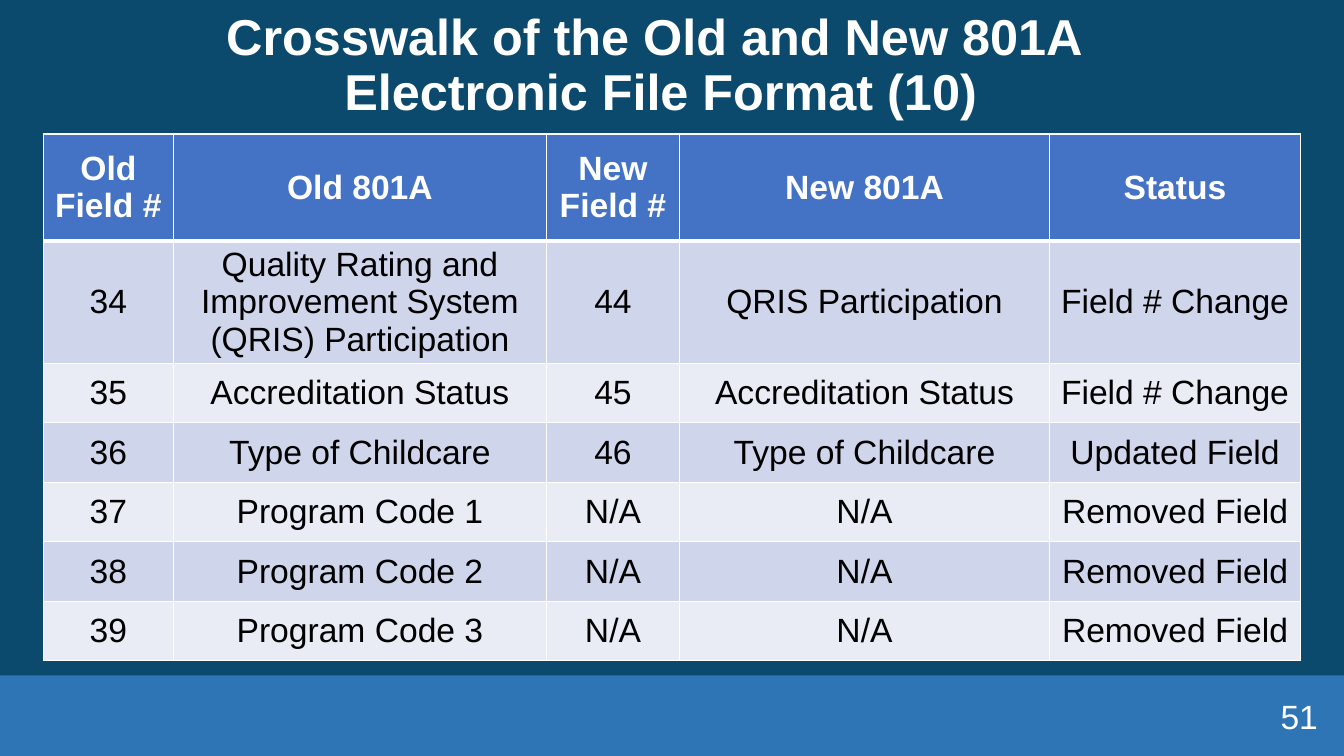
from lxml.etree import SubElement
from pptx import Presentation
from pptx.dml.color import RGBColor
from pptx.enum.shapes import MSO_SHAPE
from pptx.enum.text import MSO_ANCHOR, MSO_AUTO_SIZE, PP_ALIGN
from pptx.oxml.ns import qn
from pptx.util import Inches, Pt

SLIDE_W, SLIDE_H = 13.33, 7.5
NAVY, BLUE, HEADER_BLUE = "0C4A6D", "2E75B6", "4472C4"
BANDS = ("E9EBF5", "CFD5EA")
WHITE, BLACK = "FFFFFF", "000000"

COLUMN_WIDTHS = (1.29, 3.7, 1.32, 3.67, 2.49)
HEADER_HEIGHT, TALL_HEIGHT, ROW_HEIGHT = 1.06, 1.2, 0.59
CROSSWALK = (
    ("Old Field #", "Old 801A", "New Field #", "New 801A", "Status"),
    ("34", "Quality Rating and Improvement System (QRIS) Participation",
     "44", "QRIS Participation", "Field # Change"),
    ("35", "Accreditation Status", "45", "Accreditation Status", "Field # Change"),
    ("36", "Type of Childcare", "46", "Type of Childcare", "Updated Field"),
    ("37", "Program Code 1", "N/A", "N/A", "Removed Field"),
    ("38", "Program Code 2", "N/A", "N/A", "Removed Field"),
    ("39", "Program Code 3", "N/A", "N/A", "Removed Field"),
)


def paint(fill, color):
    fill.solid()
    fill.fore_color.rgb = RGBColor.from_string(color)


def write(frame, text, size, color, align, bold=False):
    """Set the frame's text and format its single paragraph."""
    frame.text = text
    frame.word_wrap = True
    paragraph = frame.paragraphs[0]
    paragraph.alignment = align
    for run in paragraph.runs:
        run.font.name = "Arial"
        run.font.size = Pt(size)
        run.font.bold = bold
        run.font.color.rgb = RGBColor.from_string(color)
    return paragraph


def add_title(slide, left, top, width, height):
    title = slide.shapes.title
    title.left, title.top = Inches(left), Inches(top)
    title.width, title.height = Inches(width), Inches(height)
    frame = title.text_frame
    heading = write(frame, "Crosswalk of the Old and New 801A \vElectronic File Format (10)",
                    36, WHITE, PP_ALIGN.CENTER, bold=True)
    heading.line_spacing = 0.9
    frame.auto_size = MSO_AUTO_SIZE.NONE
    frame.vertical_anchor = MSO_ANCHOR.MIDDLE


def set_borders(cell, bottom_width):
    """Draw white borders; they must come before the cell's fill in the XML."""
    properties = cell._tc.get_or_add_tcPr()
    for side, width in (("L", 1), ("R", 1), ("T", 1), ("B", bottom_width)):
        border = SubElement(properties, qn(f"a:ln{side}"), w=str(Pt(width)))
        SubElement(SubElement(border, qn("a:solidFill")), qn("a:srgbClr"), val=WHITE)


def add_crosswalk(slide, left, top):
    heights = [HEADER_HEIGHT, TALL_HEIGHT] + [ROW_HEIGHT] * (len(CROSSWALK) - 2)
    table = slide.shapes.add_table(
        len(heights), len(COLUMN_WIDTHS), Inches(left), Inches(top),
        Inches(sum(COLUMN_WIDTHS)), Inches(sum(heights))).table
    for column, width in zip(table.columns, COLUMN_WIDTHS):
        column.width = Inches(width)
    for row_number, (row, height, entries) in enumerate(zip(table.rows, heights, CROSSWALK)):
        row.height = Inches(height)
        is_header = row_number == 0
        for cell, entry in zip(row.cells, entries):
            set_borders(cell, 3 if is_header else 1)
            paint(cell.fill, HEADER_BLUE if is_header else BANDS[row_number % 2])
            cell.vertical_anchor = MSO_ANCHOR.MIDDLE
            write(cell.text_frame, entry, 24, WHITE if is_header else BLACK,
                  PP_ALIGN.CENTER, bold=is_header)


def add_footer(slide, top, height):
    band = slide.shapes.add_shape(MSO_SHAPE.RECTANGLE, 0, Inches(top),
                                  Inches(SLIDE_W), Inches(height))
    band.shadow.inherit = False
    paint(band.fill, BLUE)
    band.line.fill.background()

    number_width = 3
    page_number = slide.shapes.add_textbox(
        Inches(SLIDE_W - number_width - 0.16), Inches(top + height / 4),
        Inches(number_width), Inches(height / 2)).text_frame
    write(page_number, "51", 24, WHITE, PP_ALIGN.RIGHT)
    page_number.vertical_anchor = MSO_ANCHOR.MIDDLE


def main():
    deck = Presentation()
    deck.slide_width, deck.slide_height = Inches(SLIDE_W), Inches(SLIDE_H)
    slide = deck.slides.add_slide(deck.slide_layouts[5])
    paint(slide.background.fill, NAVY)
    add_title(slide, 0.17, -0.01, 12.77, 1.34)
    add_crosswalk(slide, 0.43, 1.33)
    add_footer(slide, SLIDE_H - 0.8, 0.8)
    deck.save("out.pptx")


if __name__ == "__main__":
    main()
